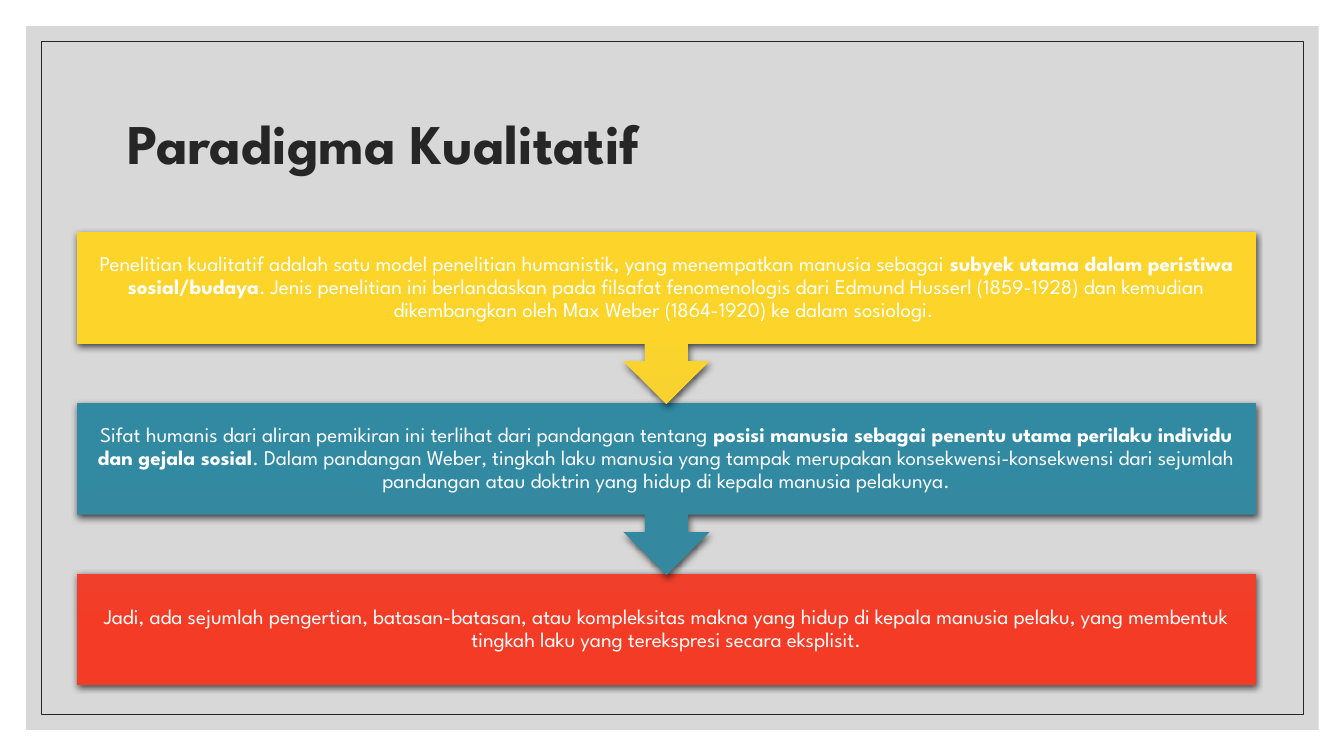
from copy import deepcopy
from dataclasses import dataclass

from lxml import etree
from pptx import Presentation
from pptx.dml.color import RGBColor
from pptx.enum.shapes import MSO_SHAPE
from pptx.enum.text import MSO_ANCHOR, PP_ALIGN
from pptx.oxml.ns import qn
from pptx.util import Emu, Inches, Pt

RECT = MSO_SHAPE.RECTANGLE
CALLOUT = MSO_SHAPE.UP_ARROW_CALLOUT
MIDDLE = MSO_ANCHOR.MIDDLE
LEFT, CENTER = PP_ALIGN.LEFT, PP_ALIGN.CENTER
FONT = "League Spartan"
WHITE, DARK, GRAY = "FFFFFF", "262626", "BFBFBF"
WIDE, HIGH = Inches(13.33), Inches(7.5)


@dataclass
class Area:
    """Left, top, width and height as percent of the slide."""
    x: float
    y: float
    w: float
    h: float

    def box(self) -> tuple[Emu, Emu, Emu, Emu]:
        return (Emu(round(WIDE * self.x / 100)), Emu(round(HIGH * self.y / 100)),
                Emu(round(WIDE * self.w / 100)), Emu(round(HIGH * self.h / 100)))


@dataclass
class Step:
    hues: tuple[str, str, str]
    runs: list[tuple[str, bool]]


STEPS = [
    Step(("F8D22F", "FCD42A", "FBD32A"), [
        ("Penelitian kualitatif adalah satu model penelitian humanistik, yang menempatkan "
         "manusia sebagai ", False),
        ("subyek utama dalam peristiwa sosial/budaya", True),
        (". Jenis penelitian ini berlandaskan pada filsafat fenomenologis dari Edmund Husserl "
         "(1859-1928) dan kemudian dikembangkan oleh Max Weber (1864-1920) ke dalam "
         "sosiologi. ", False)]),
    Step(("3488A0", "3189A2", "3188A1"), [
        ("Sifat humanis dari aliran pemikiran ini terlihat dari pandangan tentang ", False),
        ("posisi manusia sebagai penentu utama perilaku individu dan gejala sosial", True),
        (". Dalam pandangan Weber, tingkah laku manusia yang tampak merupakan "
         "konsekwensi-konsekwensi dari sejumlah pandangan atau doktrin yang hidup di kepala "
         "manusia pelakunya.", False)]),
    Step(("F03F2B", "F43B26", "F33B26"), [
        ("Jadi, ada sejumlah pengertian, batasan-batasan, atau kompleksitas makna yang hidup "
         "di kepala manusia pelaku, yang membentuk tingkah laku yang terekspresi secara "
         "eksplisit.", False)]),
]
SIDE, SPAN = 5.7, 87.77
TOP, PITCH = 30.67, 22.6
BODY, FULL = 14.8, 22.8


def tint(code: str) -> RGBColor:
    return RGBColor.from_string(code)


def add_shape(slide, kind, area: Area):
    shape = slide.shapes.add_shape(kind, *area.box())
    shape.shadow.inherit = False
    shape.line.fill.background()
    return shape


def add_text(slide, area: Area, runs: list[tuple[str, bool]], *, size: float,
             color: str, align=LEFT, pad: float = 0.1) -> None:
    frame = slide.shapes.add_textbox(*area.box()).text_frame
    frame.word_wrap = True
    frame.vertical_anchor = MIDDLE
    frame.margin_left = frame.margin_right = Inches(pad)
    frame.margin_top = frame.margin_bottom = Inches(pad)
    para = frame.paragraphs[0]
    para.alignment = align
    para.line_spacing = 0.9
    for text, bold in runs:
        run = para.add_run()
        run.text = text
        run.font.name, run.font.size, run.font.bold = FONT, Pt(size), bold
        run.font.color.rgb = tint(color)


def blend(shape, hues: tuple[str, str, str]) -> None:
    fill = shape.fill
    fill.gradient()
    fill.gradient_angle = 270
    stops = next(shape._element.iter(qn("a:gsLst")))
    stops.append(deepcopy(stops[0]))
    for i, (stop, hue) in enumerate(zip(fill.gradient_stops, hues)):
        stop.position = i / 2
        stop.color.rgb = tint(hue)


def add_alpha(color, share: int) -> None:
    etree.SubElement(color, qn("a:alpha"), val=str(share * 1000))


def add_shadow(shape) -> None:
    effects = shape._element.spPr.find(qn("a:effectLst"))
    outer = etree.SubElement(effects, qn("a:outerShdw"), blurRad=str(Pt(4.5)),
                             dist=str(Pt(1.5)), dir="5400000", algn="ctr", rotWithShape="0")
    add_alpha(etree.SubElement(outer, qn("a:srgbClr"), val="000000"), 63)


def draw_frame(slide) -> None:
    panel = add_shape(slide, RECT, Area(1.95, 3.47, 96.17, 93.07))
    panel.fill.solid()
    panel.fill.fore_color.rgb = tint(GRAY)
    add_alpha(next(panel._element.spPr.iter(qn("a:srgbClr"))), 60)
    border = add_shape(slide, RECT, Area(3.08, 5.47, 93.92, 89.07))
    border.fill.background()
    border.line.color.rgb = tint(DARK)
    border.line.width = Pt(0.5)


def draw_step(slide, row: int, step: Step) -> None:
    last = row == len(STEPS) - 1
    y = TOP + row * PITCH
    shape = add_shape(slide, RECT if last else CALLOUT,
                      Area(SIDE, y, SPAN, BODY if last else FULL))
    shape.rotation = 0 if last else 180
    blend(shape, step.hues)
    add_shadow(shape)
    add_text(slide, Area(SIDE, y, SPAN, BODY), step.runs,
             size=15, color=WHITE, align=CENTER, pad=0.12)


def main() -> None:
    deck = Presentation()
    deck.slide_width, deck.slide_height = WIDE, HIGH
    slide = deck.slides.add_slide(deck.slide_layouts[6])
    # Background and title
    draw_frame(slide)
    add_text(slide, Area(8.78, 9.33, 82.52, 20), [("Paradigma Kualitatif", True)],
             size=40, color=DARK)
    # Steps from the bottom up, so each arrow lies over the next box
    for row, step in reversed(list(enumerate(STEPS))):
        draw_step(slide, row, step)
    deck.save("out.pptx")


if __name__ == "__main__":
    main()
